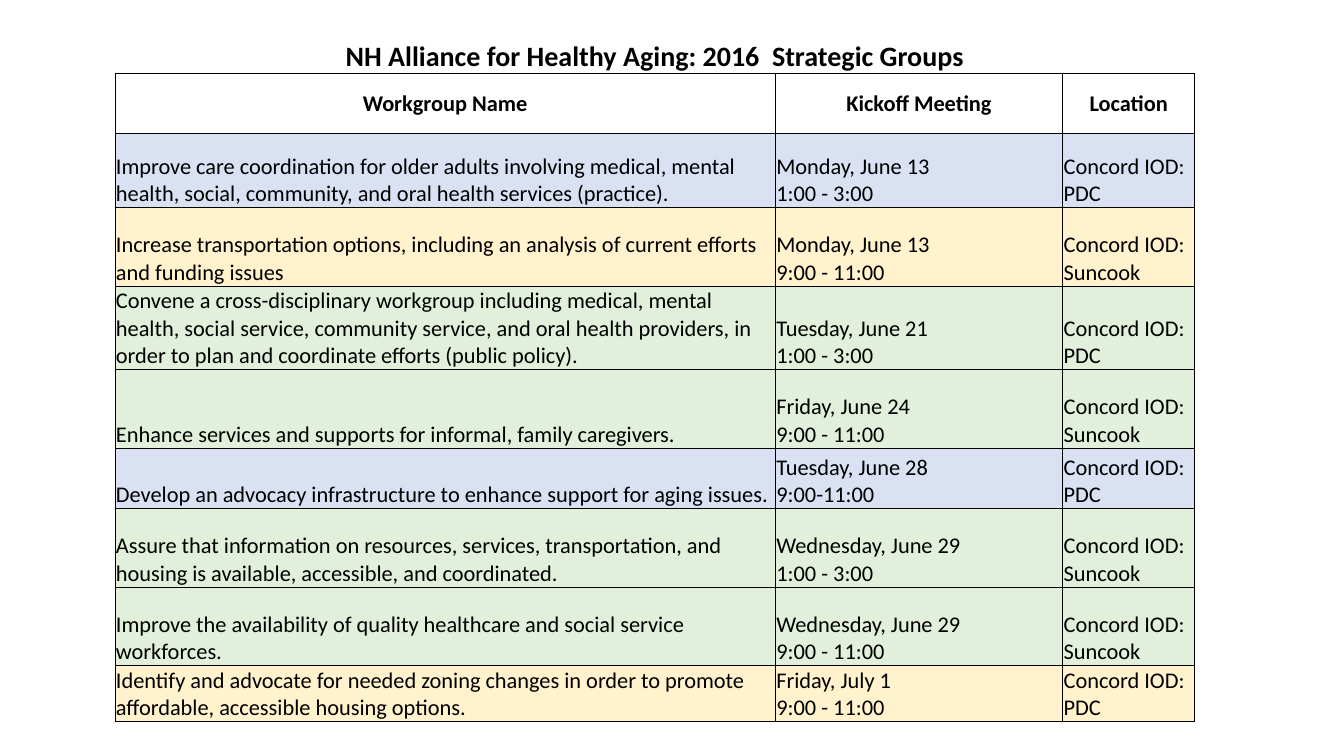
"""Build the slide listing the 2016 strategic workgroups and their kickoff meetings."""
from dataclasses import dataclass

from lxml.etree import SubElement
from pptx import Presentation
from pptx.dml.color import RGBColor
from pptx.enum.text import MSO_ANCHOR as Anchor, PP_ALIGN as Align
from pptx.oxml.ns import qn
from pptx.table import Table, _Cell as Cell
from pptx.util import Inches, Pt

BLACK = "000000"
BLUE, YELLOW, GREEN = "D9E1F2", "FFF2CC", "E2EFDA"
HEADING = "NH Alliance for Healthy Aging: 2016  Strategic Groups"
COLUMN_NAMES = ("Workgroup Name", "Kickoff Meeting", "Location")
COLUMN_WIDTHS = (6.55, 2.85, 1.31)
HEADING_HEIGHT, NAMES_HEIGHT = 0.35, 0.59
ALL_SIDES = ("L", "R", "T", "B")


@dataclass
class Workgroup:
    goal: str
    day: str
    hours: str
    room: str
    color: str
    height: float = 0.78


@dataclass
class CellStyle:
    size: int = 16
    bold: bool = False
    align: Align = Align.LEFT
    anchor: Anchor = Anchor.BOTTOM
    fill: str = ""
    sides: tuple[str, ...] = ALL_SIDES


WORKGROUPS = [
    Workgroup("Improve care coordination for older adults involving medical, mental health, "
              "social, community, and oral health services (practice).",
              "Monday, June 13", "1:00 - 3:00", "PDC", BLUE, 0.74),
    Workgroup("Increase transportation options, including an analysis of current efforts "
              "and funding issues",
              "Monday, June 13", "9:00 - 11:00", "Suncook", YELLOW),
    Workgroup("Convene a cross-disciplinary workgroup including medical, mental health, "
              "social service, community service, and oral health providers, in order to "
              "plan and coordinate efforts (public policy).",
              "Tuesday, June 21", "1:00 - 3:00", "PDC", GREEN, 0.82),
    Workgroup("Enhance services and supports for informal, family caregivers.",
              "Friday, June 24", "9:00 - 11:00", "Suncook", GREEN),
    Workgroup("Develop an advocacy infrastructure to enhance support for aging issues.",
              "Tuesday, June 28", "9:00-11:00", "PDC", BLUE, 0.6),
    Workgroup("Assure that information on resources, services, transportation, and housing "
              "is available, accessible, and coordinated.",
              "Wednesday, June 29", "1:00 - 3:00", "Suncook", GREEN),
    Workgroup("Improve the availability of quality healthcare and social service workforces.",
              "Wednesday, June 29", "9:00 - 11:00", "Suncook", GREEN),
    Workgroup("Identify and advocate for needed zoning changes in order to promote "
              "affordable, accessible housing options.",
              "Friday, July 1", "9:00 - 11:00", "PDC", YELLOW, 0.55),
]


def rgb(color: str) -> RGBColor:
    return RGBColor.from_string(color)


def draw_borders(cell: Cell, sides: tuple[str, ...]) -> None:
    properties = cell._tc.get_or_add_tcPr()
    for side in ALL_SIDES:
        line = SubElement(properties, qn(f"a:ln{side}"), w=str(Pt(0.5)))
        if side in sides:
            SubElement(SubElement(line, qn("a:solidFill")), qn("a:srgbClr"), val=BLACK)
        else:
            SubElement(line, qn("a:noFill"))


def fill_cell(cell: Cell, text: str, style: CellStyle) -> None:
    draw_borders(cell, style.sides)
    if style.fill:
        cell.fill.solid()
        cell.fill.fore_color.rgb = rgb(style.fill)
    else:
        cell.fill.background()
    cell.margin_left = cell.margin_right = cell.margin_top = Inches(0.01)
    cell.margin_bottom = 0
    cell.vertical_anchor = style.anchor
    paragraph = cell.text_frame.paragraphs[0]
    paragraph.text = text
    paragraph.alignment = style.align
    font = paragraph.font
    font.name, font.size, font.bold = "Calibri", Pt(style.size), style.bold
    font.color.rgb = rgb(BLACK)


def fill_row(table: Table, index: int, texts: tuple[str, ...], style: CellStyle) -> None:
    for column, text in enumerate(texts):
        fill_cell(table.cell(index, column), text, style)


def main() -> None:
    deck = Presentation()
    deck.slide_width, deck.slide_height = Inches(13.33), Inches(7.5)
    slide = deck.slides.add_slide(deck.slide_layouts[6])

    heights = [HEADING_HEIGHT, NAMES_HEIGHT, *(group.height for group in WORKGROUPS)]
    schedule = slide.shapes.add_table(
        len(heights), len(COLUMN_WIDTHS), Inches(1.14), Inches(0.38),
        Inches(sum(COLUMN_WIDTHS)), Inches(sum(heights))).table
    schedule.first_row = schedule.horz_banding = False
    for column, width in zip(schedule.columns, COLUMN_WIDTHS):
        column.width = Inches(width)
    for row, height in zip(schedule.rows, heights):
        row.height = Inches(height)

    fill_row(schedule, 0, (HEADING, "", ""),
             CellStyle(size=20, bold=True, align=Align.CENTER, sides=("B",)))
    schedule.cell(0, 0).merge(schedule.cell(0, len(COLUMN_WIDTHS) - 1))
    fill_row(schedule, 1, COLUMN_NAMES,
             CellStyle(bold=True, align=Align.CENTER, anchor=Anchor.MIDDLE))
    for index, group in enumerate(WORKGROUPS, start=2):
        texts = (group.goal, f"{group.day}\n{group.hours}", f"Concord IOD: {group.room}")
        fill_row(schedule, index, texts, CellStyle(fill=group.color))

    deck.save("out.pptx")


if __name__ == "__main__":
    main()
